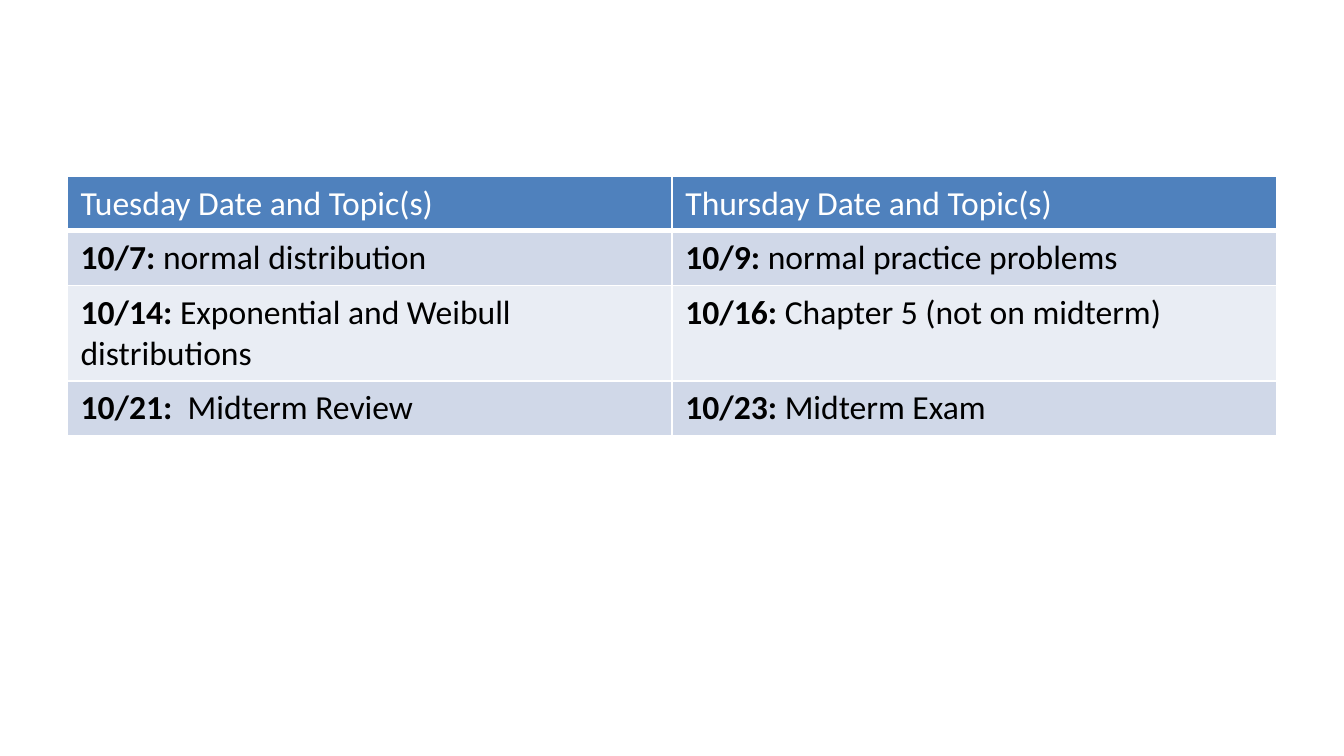
import pptx
import pptx.dml.color
import pptx.oxml
import pptx.oxml.ns
import pptx.util

Pt = pptx.util.Pt
RGBColor = pptx.dml.color.RGBColor

WHITE = RGBColor(0xFF, 0xFF, 0xFF)
BLACK = RGBColor(0, 0, 0)
HEADER_BLUE = RGBColor(0x4F, 0x81, 0xBD)
BAND_DARK = RGBColor(0xD0, 0xD8, 0xE8)
BAND_LIGHT = RGBColor(0xE9, 0xED, 0xF4)

HEADINGS = ["Tuesday Date and Topic(s)", "Thursday Date and Topic(s)"]
# Each entry is a (bold date, topic) pair.
SCHEDULE = [
    [("10/7:", " normal distribution"), ("10/9:", " normal practice problems")],
    [("10/14:", " Exponential and Weibull distributions"),
     ("10/16:", " Chapter 5 (not on midterm)")],
    [("10/21: ", " Midterm Review"), ("10/23:", " Midterm Exam")],
]
ROW_HEIGHTS = [29, 29, 51, 29]


class ScheduleSlide:
    font = "Calibri"
    size = Pt(18)

    def __init__(self, prs):
        self.s = prs.slides.add_slide(prs.slide_layouts[6])

    def table(self, left, top, width, headings, entries, heights):
        shape = self.s.shapes.add_table(
            len(heights), len(headings), Pt(left), Pt(top), Pt(width), Pt(sum(heights)))
        table = shape.table
        for row, height in zip(table.rows, heights):
            row.height = Pt(height)
        for col, heading in enumerate(headings):
            self.cell(table.cell(0, col), [(heading, False)], WHITE, HEADER_BLUE, 3)
        for i, pairs in enumerate(entries):
            band = BAND_LIGHT if i % 2 else BAND_DARK
            for col, (date, topic) in enumerate(pairs):
                self.cell(table.cell(i + 1, col), [(date, True), (topic, False)], BLACK, band)

    def cell(self, cell, parts, color, fill, bottom=1):
        p = cell.text_frame.paragraphs[0]
        for text, bold in parts:
            r = p.add_run()
            r.text = text
            r.font.name = self.font
            r.font.size = self.size
            r.font.bold = bold
            r.font.color.rgb = color
        self.borders(cell, bottom)
        cell.fill.solid()
        cell.fill.fore_color.rgb = fill

    def borders(self, cell, bottom):
        """Add the white cell borders, which must precede the fill."""
        tc_pr = cell._tc.get_or_add_tcPr()
        for side, width in (("L", 1), ("R", 1), ("T", 1), ("B", bottom)):
            tc_pr.append(pptx.oxml.parse_xml(
                f'<a:ln{side} {pptx.oxml.ns.nsdecls("a")} w="{Pt(width)}">'
                f'<a:solidFill><a:srgbClr val="{WHITE}"/></a:solidFill></a:ln{side}>'))


def main():
    prs = pptx.Presentation()
    prs.slide_width = Pt(720)
    prs.slide_height = Pt(405)
    slide = ScheduleSlide(prs)
    slide.table(36, 94.5, 648, HEADINGS, SCHEDULE, ROW_HEIGHTS)
    prs.save("out.pptx")


if __name__ == "__main__":
    main()
